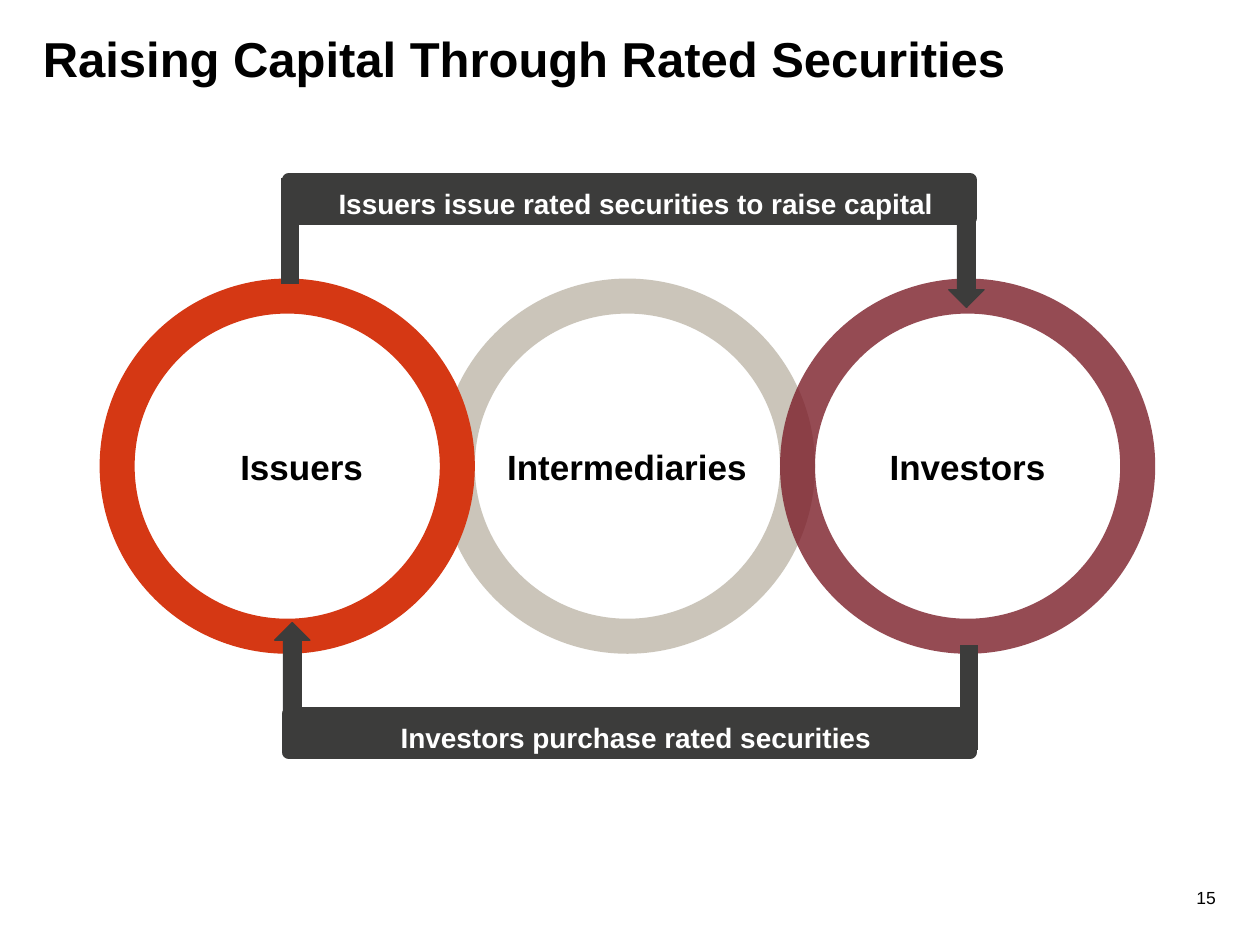
import pptx
import pptx.util
import pptx.dml.color
import pptx.enum.shapes
import pptx.enum.text
from lxml import etree

Inches = pptx.util.Inches
Pt = pptx.util.Pt
SHAPE = pptx.enum.shapes.MSO_SHAPE
ALIGN = pptx.enum.text.PP_ALIGN
ANCHOR = pptx.enum.text.MSO_ANCHOR
A = "{http://schemas.openxmlformats.org/drawingml/2006/main}"
DARK = "3C3C3B"


def color(value):
    return pptx.dml.color.RGBColor.from_string(value)


def set_line(sp, value, width, opacity=100):
    sp.line.color.rgb = color(value)
    sp.line.width = Pt(width)
    if opacity < 100:
        rgb = sp.line._get_or_add_ln().find(f"{A}solidFill/{A}srgbClr")
        etree.SubElement(rgb, A + "alpha", val=str(opacity * 1000))


def set_text(sp, text, size, value="000000", bold=True, align=ALIGN.CENTER,
             anchor=ANCHOR.MIDDLE, left=0, top=0, right=0):
    tf = sp.text_frame
    tf.text = text
    tf.word_wrap = True
    tf.auto_size = pptx.enum.text.MSO_AUTO_SIZE.NONE
    tf.vertical_anchor = anchor
    tf.margin_left, tf.margin_top = Inches(left), Inches(top)
    tf.margin_right, tf.margin_bottom = Inches(right), 0
    p = tf.paragraphs[0]
    p.alignment = align
    font = p.runs[0].font
    font.name, font.size, font.bold = "Arial", Pt(size), bold
    font.color.rgb = color(value)
    return p


def add_shape(s, kind, left, top, width, height, fill=None):
    sp = s.shapes.add_shape(kind, Inches(left), Inches(top), Inches(width), Inches(height))
    sp.shadow.inherit = False
    if fill:
        sp.fill.solid()
        sp.fill.fore_color.rgb = color(fill)
    else:
        sp.fill.background()
    return sp


def add_title(s, text, left, top, width, height):
    title = s.shapes.title
    title.left, title.top = Inches(left), Inches(top)
    title.width, title.height = Inches(width), Inches(height)
    set_text(title, text, 28, align=ALIGN.LEFT, anchor=ANCHOR.TOP)


def add_ring(s, text, left, top, size, line, opacity=80, fill=None,
             align=ALIGN.CENTER, indent=0):
    sp = add_shape(s, SHAPE.OVAL, left, top, size, size, fill)
    set_line(sp, line, 20, opacity)
    set_text(sp, text, 20, align=align, left=indent)


def add_feeder(s, x, top, bottom):
    """Plain vertical bar that joins a band to the ring it starts from."""
    cx = s.shapes.add_connector(pptx.enum.shapes.MSO_CONNECTOR.STRAIGHT,
                                Inches(x), Inches(top), Inches(x), Inches(bottom))
    set_line(cx, DARK, 10)
    etree.SubElement(cx._element.spPr, A + "effectLst")


def add_arrow(s, x, top, length, rotation):
    """Vertical arrow centred on x, made by turning a right arrow."""
    breadth = 0.28
    sp = add_shape(s, SHAPE.RIGHT_ARROW, x - length / 2,
                   top + (length - breadth) / 2, length, breadth, DARK)
    sp.rotation = rotation
    set_line(sp, DARK, 0.75)


def add_band(s, text, left, top, width, height):
    sp = add_shape(s, SHAPE.RECTANGLE, left, top, width, height, DARK)
    set_line(sp, DARK, 8)
    p = set_text(sp, text, 16, "FFFFFF", left=0.2, top=0.04, right=0.1)
    p.line_spacing = 1.1


def add_issue_flow(s, left, top, width, height):
    add_feeder(s, left + 0.01, top - 0.02, top + 0.82)
    add_arrow(s, left + width - 0.03, top + 0.2, 0.81, 90)
    add_band(s, "Issuers issue rated securities to raise capital", left, top, width, height)


def add_purchase_flow(s, left, top, width, height):
    add_band(s, "Investors purchase rated securities", left, top, width, height)
    add_arrow(s, left + 0.03, top - 0.73, 1.01, 270)
    add_feeder(s, left + width - 0.01, top - 0.55, top + 0.28)


def add_rings(s, left, top, size):
    """Three touching rings in a row; the issuers' ring lies on top."""
    add_ring(s, "Intermediaries", left + size, top, size, "BEB7A9", align=ALIGN.LEFT)
    add_ring(s, "Investors", left + 2 * size, top, size, "7B1E29")
    add_ring(s, "Issuers", left, top, size, "D53814", 100, "FFFFFF", indent=0.23)


def add_page_number(s, text, left, top, width, height):
    sp = s.shapes.add_textbox(Inches(left), Inches(top), Inches(width), Inches(height))
    set_text(sp, text, 10, bold=False, align=ALIGN.RIGHT, anchor=ANCHOR.TOP)


def main():
    prs = pptx.Presentation()
    prs.slide_width, prs.slide_height = Inches(10), Inches(7.5)
    s = prs.slides.add_slide(prs.slide_layouts[5])
    add_title(s, "Raising Capital Through Rated Securities", 0.34, 0.23, 9.5, 0.94)
    add_rings(s, 0.93, 2.35, 2.7)
    add_issue_flow(s, 2.29, 1.43, 5.41, 0.3)
    add_purchase_flow(s, 2.29, 5.67, 5.41, 0.3)
    add_page_number(s, "15", 9.42, 7.04, 0.23, 0.28)
    prs.save("out.pptx")


if __name__ == "__main__":
    main()
